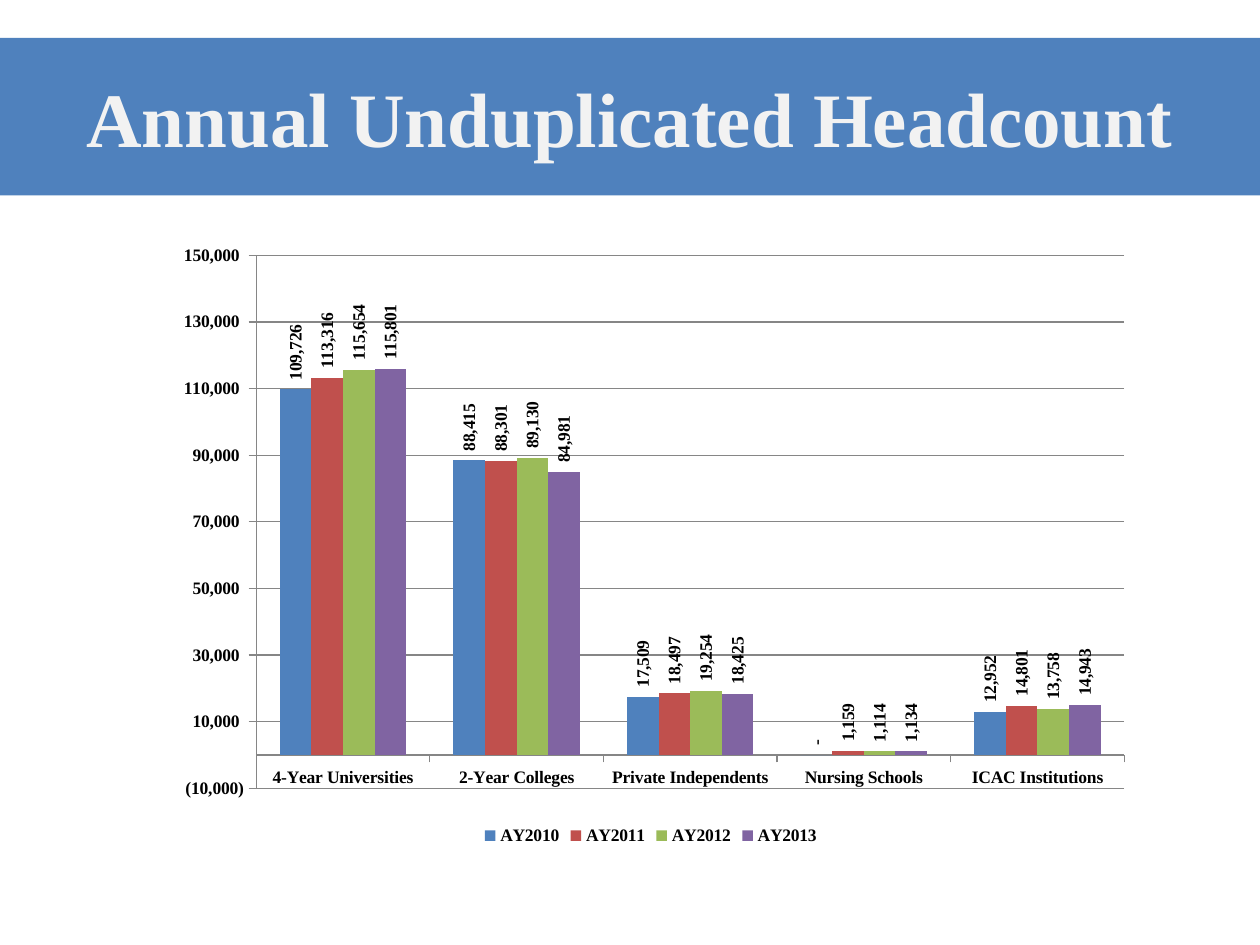
import pptx
import pptx.util
import pptx.dml.color
import pptx.chart.data
import pptx.enum.chart
import pptx.enum.shapes
import pptx.enum.text
import pptx.oxml
import pptx.oxml.ns

Inches = pptx.util.Inches
Pt = pptx.util.Pt
COLORS = {"blue": "4F81BD", "red": "C0504D", "green": "9BBB59", "purple": "8064A2",
          "title": "F2F2F2", "text": "000000", "grid": "868686"}
CATEGORIES = ["4-Year Universities", "2-Year Colleges", "Private Independents",
              "Nursing Schools", "ICAC Institutions"]
HEADCOUNT = {
    "AY2010": ("blue", [109726, 88415, 17509, 0, 12952]),
    "AY2011": ("red", [113316, 88301, 18497, 1159, 14801]),
    "AY2012": ("green", [115654, 89130, 19254, 1114, 13758]),
    "AY2013": ("purple", [115801, 84981, 18425, 1134, 14943]),
}
NUMBER_FORMAT = '_(* #,##0_);_(* \\(#,##0\\);_(* "-"??_);_('
PLOT_LAYOUT = {"x": 0.1, "y": 0.04, "w": 0.88, "h": 0.86}


def rgb(name):
    return pptx.dml.color.RGBColor.from_string(COLORS[name])


def format_font(font, size=10, color="text", bold=True, name="Times New Roman"):
    font.name, font.size, font.bold = name, Pt(size), bold
    font.color.rgb = rgb(color)


def add_text(tf, text, align=pptx.enum.text.PP_ALIGN.CENTER, **style):
    p = tf.paragraphs[0]
    p.alignment = align
    r = p.add_run()
    r.text = text
    format_font(r.font, **style)


class Deck:
    def __init__(self, prs):
        self.prs = prs
        self.s = prs.slides.add_slide(prs.slide_layouts[6])

    def banner(self, text, x, y, w, h):
        sp = self.s.shapes.add_shape(pptx.enum.shapes.MSO_SHAPE.RECTANGLE,
                                     Inches(x), Inches(y), Inches(w), Inches(h))
        sp.shadow.inherit = False
        sp.fill.solid()
        sp.fill.fore_color.rgb = rgb("blue")
        sp.line.fill.background()
        tf = sp.text_frame
        tf.word_wrap = True
        tf.vertical_anchor = pptx.enum.text.MSO_ANCHOR.MIDDLE
        add_text(tf, text, size=44, color="title")

    def column_chart(self, x, y, w, h):
        data = pptx.chart.data.CategoryChartData(number_format=NUMBER_FORMAT)
        data.categories = CATEGORIES
        for name, (_, values) in HEADCOUNT.items():
            data.add_series(name, values)
        chart = self.s.shapes.add_chart(
            pptx.enum.chart.XL_CHART_TYPE.COLUMN_CLUSTERED,
            Inches(x), Inches(y), Inches(w), Inches(h), data).chart
        chart.has_title = False
        format_font(chart.font)
        chart.has_legend = True
        chart.legend.position = pptx.enum.chart.XL_LEGEND_POSITION.BOTTOM
        chart.legend.include_in_layout = False
        format_font(chart.legend.font)
        self.style_axes(chart)
        plot = chart.plots[0]
        plot.gap_width, plot.overlap, plot.vary_by_categories = 150, 0, False
        for series, (color, _) in zip(plot.series, HEADCOUNT.values()):
            self.style_series(series, color)
        self.place_plot(chart)

    def style_axes(self, chart):
        for axis in (chart.category_axis, chart.value_axis):
            format_font(axis.tick_labels.font)
            axis.major_tick_mark = pptx.enum.chart.XL_TICK_MARK.OUTSIDE
            axis.minor_tick_mark = pptx.enum.chart.XL_TICK_MARK.NONE
            axis.format.line.color.rgb = rgb("grid")
            axis.format.line.width = Pt(0.75)
        axis = chart.value_axis
        axis.minimum_scale, axis.maximum_scale, axis.major_unit = -10000, 150000, 20000
        axis.tick_labels.number_format = NUMBER_FORMAT
        axis.tick_labels.number_format_is_linked = False
        axis.has_major_gridlines = True
        axis.major_gridlines.format.line.color.rgb = rgb("grid")
        axis.major_gridlines.format.line.width = Pt(0.75)

    def style_series(self, series, color):
        series.format.fill.solid()
        series.format.fill.fore_color.rgb = rgb(color)
        series.invert_if_negative = False
        labels = series.data_labels
        labels.show_value = True
        labels.position = pptx.enum.chart.XL_LABEL_POSITION.OUTSIDE_END
        labels.number_format = NUMBER_FORMAT
        labels.number_format_is_linked = False
        format_font(labels.font)
        body = labels._element.find(".//" + pptx.oxml.ns.qn("a:bodyPr"))
        body.set("rot", "-5400000")
        body.set("vert", "horz")

    def place_plot(self, chart):
        area = chart._chartSpace.chart.plotArea
        for old in area.findall(pptx.oxml.ns.qn("c:layout")):
            area.remove(old)
        sizes = "".join(f'<c:{k} val="{v}"/>' for k, v in PLOT_LAYOUT.items())
        area.insert(0, pptx.oxml.parse_xml(
            f'<c:layout {pptx.oxml.ns.nsdecls("c")}><c:manualLayout>'
            '<c:layoutTarget val="inner"/><c:xMode val="edge"/><c:yMode val="edge"/>'
            f'{sizes}</c:manualLayout></c:layout>'))


def main():
    prs = pptx.Presentation()
    prs.slide_width, prs.slide_height = Inches(10), Inches(7.5)
    deck = Deck(prs)
    deck.banner("Annual Unduplicated Headcount", 0, 0.3, 10, 1.25)
    deck.column_chart(1.25, 1.83, 7.83, 4.92)
    prs.save("out.pptx")


if __name__ == "__main__":
    main()
